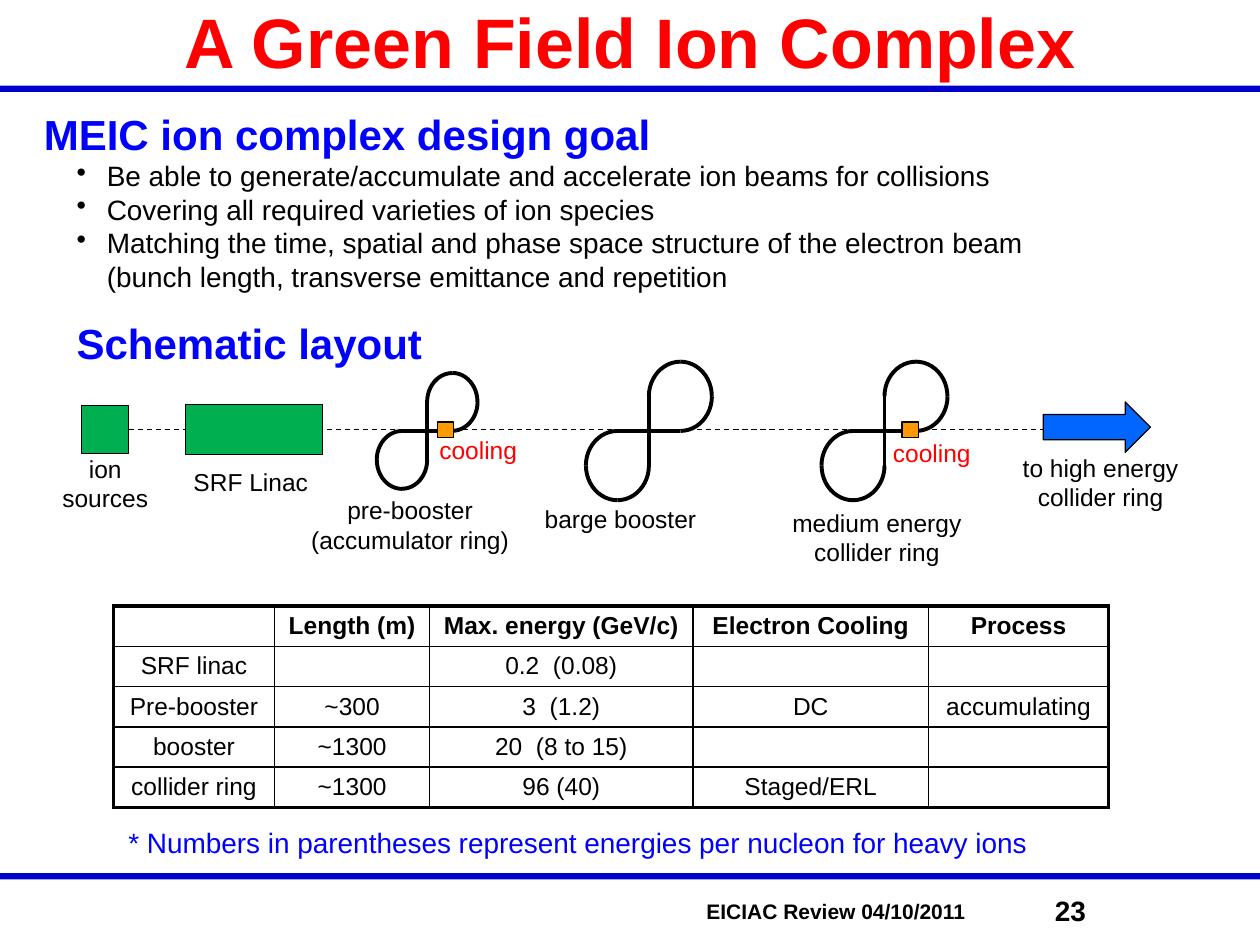
from typing import NamedTuple

from lxml import etree
from pptx import Presentation
from pptx.dml.color import RGBColor
from pptx.enum.dml import MSO_LINE
from pptx.enum.shapes import MSO_CONNECTOR, MSO_SHAPE
from pptx.enum.text import MSO_ANCHOR, PP_ALIGN
from pptx.oxml.ns import qn
from pptx.util import Inches, Pt

RECT, ARC, ARROW = MSO_SHAPE.RECTANGLE, MSO_SHAPE.ARC, MSO_SHAPE.RIGHT_ARROW
STRAIGHT = MSO_CONNECTOR.STRAIGHT
DASH = MSO_LINE.DASH
LEFT, CENTER = PP_ALIGN.LEFT, PP_ALIGN.CENTER
MIDDLE = MSO_ANCHOR.MIDDLE
FONT = "Arial"
BLACK, RED, BLUE, BAR_BLUE = "000000", "FF0000", "0000FF", "0000CC"
GREEN, ORANGE, ARROW_BLUE = "00B050", "FF9900", "0066FF"
BEAM_Y = 3.41


class Label(NamedTuple):
    text: str
    left: float
    top: float
    width: float
    height: float
    size: float = 14
    color: str = BLACK
    bold: bool = False
    align: PP_ALIGN = CENTER


class Line(NamedTuple):
    text: str
    size: float
    color: str
    bold: bool
    margin: float
    indent: float = 0
    bullet: bool = False
    before: float = 0


class Ring(NamedTuple):
    """Figure-eight ring: crossing point and the size of one lobe."""
    x: float
    y: float
    width: float
    height: float


LABELS = [
    Label("A Green Field Ion Complex", 0, 0, 10, 0.65, 40, RED, True),
    Label("EICIAC Review 04/10/2011", 5.28, 7.08, 2.71, 0.3, 12, bold=True),
    Label("23", 8.05, 7.04, 0.89, 0.37, 16, bold=True),
    Label("ion sources", 0.39, 3.55, 0.89, 0.57),
    Label("SRF Linac", 1.38, 3.65, 1.22, 0.34),
    Label("pre-booster\n(accumulator ring)", 2, 3.88, 2.51, 0.57),
    Label("barge booster", 4.14, 3.95, 1.57, 0.34),
    Label("medium energy collider ring", 6.01, 3.98, 1.9, 0.57),
    Label("to high energy collider ring", 7.88, 3.54, 1.71, 0.57),
    Label("cooling", 6.92, 3.42, 0.95, 0.34, color=RED),
    Label("cooling", 3.32, 3.4, 0.95, 0.34, color=RED),
    Label("* Numbers in parentheses represent energies per nucleon for heavy ions",
          0.92, 6.5, 7.95, 0.37, 16, BLUE, align=LEFT),
]
GOALS = [
    Line("MEIC ion complex design goal", 24, BLUE, True, 0.19, -0.19),
    Line("Be able to generate/accumulate and accelerate ion beams for collisions",
         16, BLACK, False, 0.5, -0.24, True),
    Line("Covering all required varieties of ion species",
         16, BLACK, False, 0.5, -0.24, True),
    Line("Matching the time, spatial and phase space structure of the electron beam",
         16, BLACK, False, 0.5, -0.24, True),
    Line("(bunch length, transverse emittance and repetition", 16, BLACK, False, 0.5),
    Line("Schematic layout", 24, BLUE, True, 0.26, before=14),
]
RINGS = [
    Ring(3.39, 3.42, 0.4, 0.46),
    Ring(5.15, 3.42, 0.5, 0.55),
    Ring(7.02, 3.42, 0.5, 0.55),
]
COLUMN_WIDTHS = [1.28, 1.23, 2.09, 1.87, 1.43]
ROW_HEIGHT = 0.32
STAGES = [
    ["", "Length (m)", "Max. energy (GeV/c)", "Electron Cooling", "Process"],
    ["SRF linac", "", "0.2  (0.08)", "", ""],
    ["Pre-booster", "~300", "3  (1.2)", "DC", "accumulating"],
    ["booster", "~1300", "20  (8 to 15)", "", ""],
    ["collider ring", "~1300", "96 (40)", "Staged/ERL", ""],
]


def rgb(color: str) -> RGBColor:
    return RGBColor.from_string(color)


def style(paragraph, size: float, color: str, bold: bool) -> None:
    font = paragraph.font
    font.name, font.size, font.bold = FONT, Pt(size), bold
    font.color.rgb = rgb(color)


def add_text_frame(slide, left, top, width, height):
    box = slide.shapes.add_textbox(*map(Inches, (left, top, width, height)))
    frame = box.text_frame
    frame.word_wrap = True
    return frame


def add_label(slide, label: Label) -> None:
    frame = add_text_frame(slide, *label[1:5])
    frame.vertical_anchor = MIDDLE
    frame.text = label.text
    for paragraph in frame.paragraphs:
        paragraph.alignment = label.align
        style(paragraph, label.size, label.color, label.bold)


def add_goals(slide) -> None:
    frame = add_text_frame(slide, 0.25, 0.81, 9.33, 2.19)
    for i, line in enumerate(GOALS):
        paragraph = frame.add_paragraph() if i else frame.paragraphs[0]
        paragraph.text = line.text
        if line.before:
            paragraph.space_before = Pt(line.before)
        properties = paragraph._p.get_or_add_pPr()
        properties.set("marL", str(Inches(line.margin)))
        properties.set("indent", str(Inches(line.indent)))
        if line.bullet:
            etree.SubElement(properties, qn("a:buChar")).set("char", "•")
        style(paragraph, line.size, line.color, line.bold)


def add_block(slide, kind, left, top, width, height, fill=None, outline=0.75, rotation=0):
    """Add a preset shape; no fill colour leaves it open, outline 0 has no line."""
    block = slide.shapes.add_shape(kind, *map(Inches, (left, top, width, height)))
    block.shadow.inherit = False
    block.rotation = rotation
    if fill:
        block.fill.solid()
        block.fill.fore_color.rgb = rgb(fill)
    else:
        block.fill.background()
    if outline:
        block.line.color.rgb = rgb(BLACK)
        block.line.width = Pt(outline)
    else:
        block.line.fill.background()
    return block


def add_line(slide, x1, y1, x2, y2, width):
    line = slide.shapes.add_connector(STRAIGHT, *map(Inches, (x1, y1, x2, y2)))
    line.line.color.rgb = rgb(BLACK)
    line.line.width = Pt(width)
    etree.SubElement(line._element.spPr, qn("a:effectLst"))
    return line


def add_ring(slide, ring: Ring) -> None:
    x, y, w, h = ring
    add_line(slide, x, y - h / 2, x, y + h / 2, 2.25)
    add_line(slide, x + w / 2, y, x - w / 2, y, 2.25)
    lobes = [(x + w / 2, y - h / 2, (0, 270, 90)), (x - w / 2, y + h / 2, (180, 90, 270))]
    for center_x, center_y, rotations in lobes:
        for rotation in rotations:
            aw, ah = (w, h) if rotation % 180 == 0 else (h, w)
            add_block(slide, ARC, center_x - aw / 2, center_y - ah / 2, aw, ah,
                      outline=2.25, rotation=rotation)


def set_borders(cell, **widths: float) -> None:
    properties = cell._tc.get_or_add_tcPr()
    for i, (side, width) in enumerate(widths.items()):
        border = etree.Element(qn(f"a:ln{side}"), w=str(Pt(width)))
        fill = etree.SubElement(border, qn("a:solidFill"))
        etree.SubElement(fill, qn("a:srgbClr")).set("val", BLACK)
        properties.insert(i, border)


def add_stage_table(slide) -> None:
    rows, columns = len(STAGES), len(COLUMN_WIDTHS)
    table = slide.shapes.add_table(
        rows, columns, Inches(0.9), Inches(4.81),
        Inches(sum(COLUMN_WIDTHS)), Inches(ROW_HEIGHT * rows)).table
    table.first_row = table.horz_banding = False
    for column, width in zip(table.columns, COLUMN_WIDTHS):
        column.width = Inches(width)
    for r, stage in enumerate(STAGES):
        table.rows[r].height = Inches(ROW_HEIGHT)
        for c, value in enumerate(stage):
            cell = table.cell(r, c)
            cell.fill.background()
            cell.vertical_anchor = MIDDLE
            cell.margin_left = cell.margin_right = Inches(0.05)
            cell.margin_top = cell.margin_bottom = Inches(0.01)
            cell.text = value
            paragraph = cell.text_frame.paragraphs[0]
            paragraph.alignment = CENTER
            style(paragraph, 14, BLACK, r == 0)
            edges = {"L": c == 0, "R": c == columns - 1, "T": r == 0, "B": r == rows - 1}
            set_borders(cell, **{side: 2.25 if outer else 1 for side, outer in edges.items()})


def main() -> None:
    deck = Presentation()
    deck.slide_width, deck.slide_height = Inches(10), Inches(7.5)
    slide = deck.slides.add_slide(deck.slide_layouts[6])
    for bar_top in (0.68, 6.93):
        add_block(slide, RECT, 0, bar_top, 10, 0.05, BAR_BLUE, 0)
    add_stage_table(slide)
    add_goals(slide)
    beam = add_line(slide, 1.02, BEAM_Y, 8.33, BEAM_Y, 0.75)
    beam.line.dash_style = DASH
    ion_source = add_block(slide, RECT, 0.65, BEAM_Y - 0.19, 0.37, 0.38, GREEN)
    beam.begin_connect(ion_source, 3)
    add_block(slide, RECT, 1.47, BEAM_Y - 0.2, 1.09, 0.4, GREEN)
    for ring in RINGS:
        add_ring(slide, ring)
    add_block(slide, ARROW, 8.28, 3.19, 0.85, 0.4, ARROW_BLUE)
    for cooler_left in (3.47, 7.16):
        add_block(slide, RECT, cooler_left, BEAM_Y - 0.06, 0.13, 0.12, ORANGE)
    for label in LABELS:
        add_label(slide, label)
    deck.save("out.pptx")


if __name__ == "__main__":
    main()
